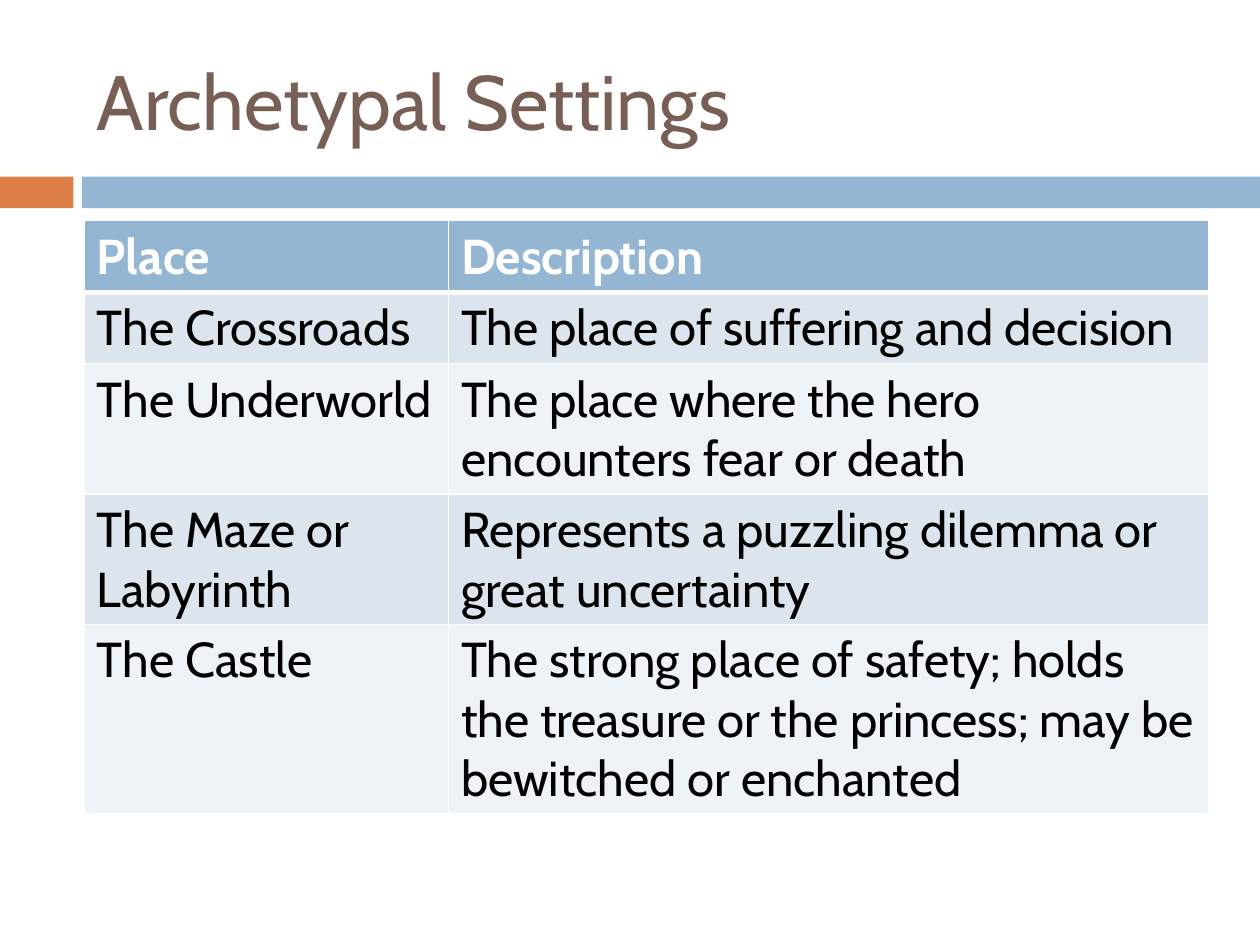
from lxml import etree
from pptx import Presentation
from pptx import util as u
from pptx.dml.color import RGBColor
from pptx.enum import shapes, text
from pptx.oxml import ns

FONT = "Cabin"
WHITE, BLACK, BROWN = "FFFFFF", "000000", "775F55"
ORANGE, BLUE = "DD8047", "94B6D2"
BANDS = ("DCE5EE", "EEF3F7")
LEFT, WIDTH = 1.7, 22.66
COLUMN_WIDTHS = (7.34, 15.32)
ROW_HEIGHT = 1.04
SETTINGS = [
    ("Place", "Description"),
    ("The Crossroads", "The place of suffering and decision"),
    ("The Underworld", "The place where the hero encounters fear or death"),
    ("The Maze or Labyrinth", "Represents a puzzling dilemma or great uncertainty"),
    ("The Castle", "The strong place of safety; holds the treasure or the princess; "
                   "may be bewitched or enchanted"),
]


def color(value):
    """Return the colour for a hex string."""
    return RGBColor.from_string(value)


def write_text(text_frame, content, size=28, fill=BLACK, bold=False):
    """Write one formatted run into a text frame."""
    run = text_frame.paragraphs[0].add_run()
    run.text = content
    run.font.name = FONT
    run.font.size = u.Pt(size)
    run.font.bold = bold
    run.font.color.rgb = color(fill)


def add_bar(slide, left, width, fill):
    """Add a plain bar to the strip below the title."""
    shape = slide.shapes.add_shape(shapes.MSO_SHAPE.RECTANGLE, u.Cm(left), u.Cm(3.56),
                                   u.Cm(width), u.Cm(0.64))
    shape.shadow.inherit = False
    shape.fill.solid()
    shape.fill.fore_color.rgb = color(fill)
    shape.line.fill.background()


def add_title(slide, content):
    """Add the slide title, centred vertically in its box."""
    box = slide.shapes.add_textbox(u.Cm(LEFT), u.Cm(0.64), u.Cm(WIDTH), u.Cm(2.74))
    box.text_frame.word_wrap = True
    box.text_frame.vertical_anchor = text.MSO_ANCHOR.MIDDLE
    write_text(box.text_frame, content, size=44, fill=BROWN)


def set_borders(cell, **widths):
    """Draw white cell borders with the given widths in points."""
    properties = cell._tc.get_or_add_tcPr()
    for index, side in enumerate(("lnL", "lnR", "lnT", "lnB")):
        line = etree.Element(ns.qn(f"a:{side}"), w=str(u.Pt(widths.get(side, 1))))
        fill = etree.SubElement(line, ns.qn("a:solidFill"))
        etree.SubElement(fill, ns.qn("a:srgbClr"), val=WHITE)
        properties.insert(index, line)


def add_settings_table(slide, rows):
    """Add the table with a header row and banded body rows."""
    frame = slide.shapes.add_table(len(rows), len(COLUMN_WIDTHS), u.Cm(LEFT), u.Cm(4.45),
                                   u.Cm(WIDTH), u.Cm(ROW_HEIGHT * len(rows)))
    table = frame.table
    for column, width in zip(table.columns, COLUMN_WIDTHS):
        column.width = u.Cm(width)
    for row_index, row in enumerate(rows):
        header = row_index == 0
        for column_index, content in enumerate(row):
            cell = table.cell(row_index, column_index)
            cell.fill.solid()
            cell.fill.fore_color.rgb = color(BLUE if header else BANDS[(row_index - 1) % 2])
            write_text(cell.text_frame, content, fill=WHITE if header else BLACK, bold=header)
            set_borders(cell, lnT=3 if row_index == 1 else 1, lnB=3 if header else 1)


def main():
    """Build the slide and save it."""
    presentation = Presentation()
    presentation.slide_width, presentation.slide_height = u.Cm(25.4), u.Cm(19.05)
    slide = presentation.slides.add_slide(presentation.slide_layouts[6])
    add_bar(slide, 0, 1.48, ORANGE)
    add_bar(slide, 1.65, 23.75, BLUE)
    add_title(slide, "Archetypal Settings")
    add_settings_table(slide, SETTINGS)
    presentation.save("out.pptx")


if __name__ == "__main__":
    main()
